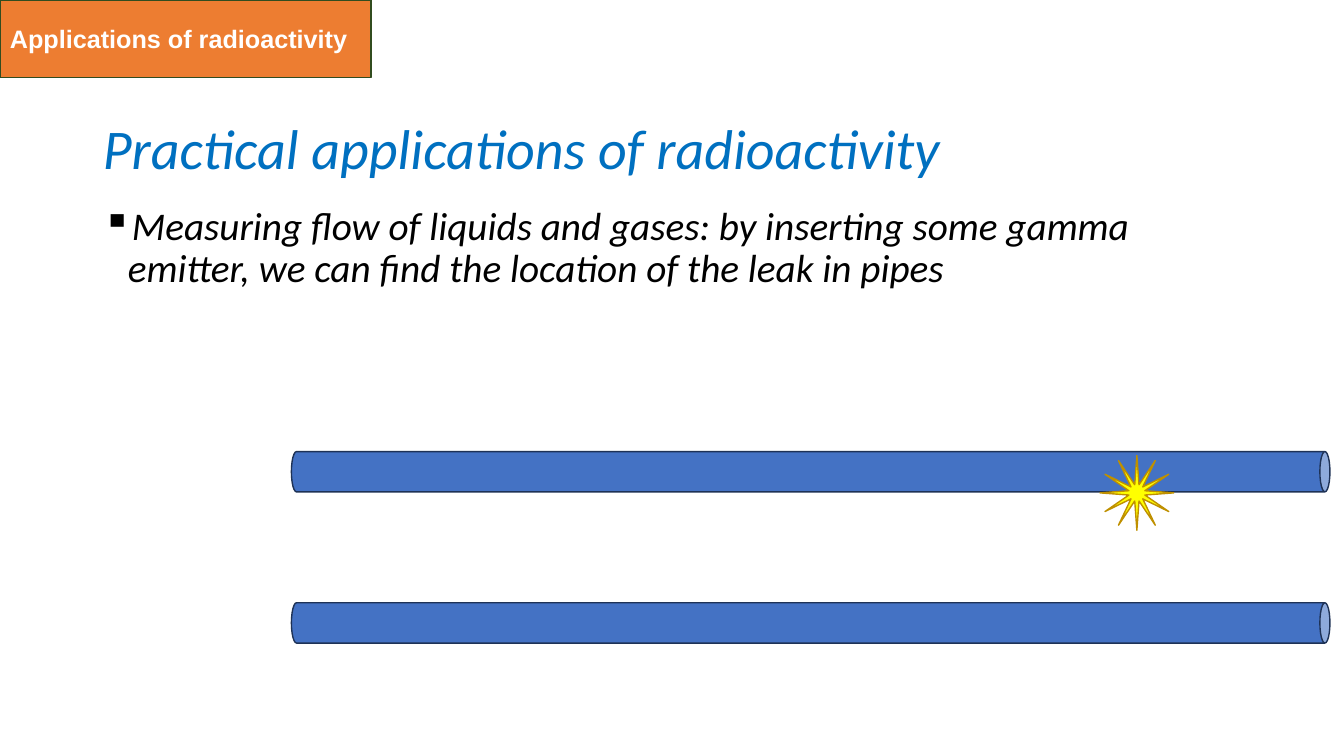
import pptx
import pptx.dml.color
import pptx.enum.shapes
import pptx.enum.text
import pptx.oxml
import pptx.oxml.ns
import pptx.util

SLIDE_WIDTH = pptx.util.Inches(13.33)
SLIDE_HEIGHT = pptx.util.Inches(7.5)
COLOURS = {
    "title": "0070C0", "body": "000000",
    "tag": "ED7D31", "tag line": "314C1F", "tag text": "FFFFFF",
    "pipe": "4472C4", "pipe line": "1E3256",
    "leak": "FFFF00", "leak line": "BF9000",
}
# Shares of the slide, in percent
MARGIN, TEXT_WIDTH = 6.9, 86.27
PIPE_LEFT, PIPE_TOP, PIPE_LENGTH, PIPE_THICKNESS = 21.68, 59.73, 77.27, 5.33
PIPE_STEP = 20

HEADING_FONT = {"name": "Calibri", "size": pptx.util.Pt(40), "italic": True}
BODY_FONT = {"name": "Calibri", "size": pptx.util.Pt(28), "italic": True}
TAG_FONT = {"name": "Arial", "size": pptx.util.Pt(18), "bold": True}


def colour(name):
    return pptx.dml.color.RGBColor.from_string(COLOURS[name])


def area(left, top, width, height):
    """Turn percentages of the slide into lengths."""
    sides = (SLIDE_WIDTH, SLIDE_HEIGHT) * 2
    return [round(side * share / 100)
            for side, share in zip(sides, (left, top, width, height))]


def apply(target, values):
    for key, value in values.items():
        setattr(target, key, value)


def write(frame, text, font, colour_name, anchor, **paragraph_format):
    apply(frame, {"word_wrap": True, "vertical_anchor": anchor,
                  "auto_size": pptx.enum.text.MSO_AUTO_SIZE.NONE})
    paragraph = frame.paragraphs[0]
    apply(paragraph, {"alignment": pptx.enum.text.PP_ALIGN.LEFT,
                      **paragraph_format})
    run = paragraph.add_run()
    run.text = text
    apply(run.font, font)
    run.font.color.rgb = colour(colour_name)
    return paragraph


def add_bullet(paragraph, symbol, indent):
    properties = paragraph._p.get_or_add_pPr()
    properties.set("marL", str(indent))
    properties.set("indent", str(-indent))
    bullet = pptx.oxml.parse_xml(
        f'<a:buChar {pptx.oxml.ns.nsdecls("a")} char="{symbol}"/>')
    properties.append(bullet)


def add_figure(slide, kind, box, colour_name):
    figure = slide.shapes.add_shape(kind, *box)
    figure.shadow.inherit = False
    figure.fill.solid()
    figure.fill.fore_color.rgb = colour(colour_name)
    figure.line.color.rgb = colour(colour_name + " line")
    figure.line.width = pptx.util.Pt(1)
    return figure


def add_pipe(slide, top):
    """Lay an upright can on its side within the pipe's area."""
    left, top, length, thickness = area(
        PIPE_LEFT, top, PIPE_LENGTH, PIPE_THICKNESS)
    shift = (length - thickness) // 2
    upright = (left + shift, top - shift, thickness, length)
    pipe = add_figure(slide, pptx.enum.shapes.MSO_SHAPE.CAN, upright, "pipe")
    pipe.rotation = 90


def main():
    shapes = pptx.enum.shapes.MSO_SHAPE
    anchors = pptx.enum.text.MSO_ANCHOR
    deck = pptx.Presentation()
    apply(deck, {"slide_width": SLIDE_WIDTH, "slide_height": SLIDE_HEIGHT})
    slide = deck.slides.add_slide(deck.slide_layouts.get_by_name("Title Only"))

    # Heading
    heading = slide.shapes.title
    apply(heading, dict(zip(("left", "top", "width", "height"),
                            area(MARGIN, 5.33, TEXT_WIDTH, 19.33))))
    write(heading.text_frame, "Practical applications of radioactivity",
          HEADING_FONT, "title", anchors.BOTTOM, line_spacing=0.9)

    # Explanation
    explanation = slide.shapes.add_textbox(
        *area(MARGIN, 26.67, TEXT_WIDTH, 63.47))
    point = write(
        explanation.text_frame,
        "Measuring flow of liquids and gases: by inserting some gamma "
        "emitter, we can find the location of the leak in pipes",
        BODY_FONT, "body", anchors.TOP,
        line_spacing=0.9, space_before=pptx.util.Pt(10))
    add_bullet(point, "▪", pptx.util.Inches(0.25))

    # Section tag in the corner
    tag = add_figure(slide, shapes.RECTANGLE, area(0, 0, 27.61, 10.27), "tag")
    write(tag.text_frame, "Applications of radioactivity",
          TAG_FONT, "tag text", anchors.MIDDLE)

    # Pipes, with the leak on the upper one
    for row in range(2):
        add_pipe(slide, PIPE_TOP + row * PIPE_STEP)
    leak = add_figure(slide, shapes.STAR_12_POINT,
                      area(81.85, 60.27, 5.48, 9.87), "leak")
    leak.adjustments[0] = 0.113

    deck.save("out.pptx")


if __name__ == "__main__":
    main()
